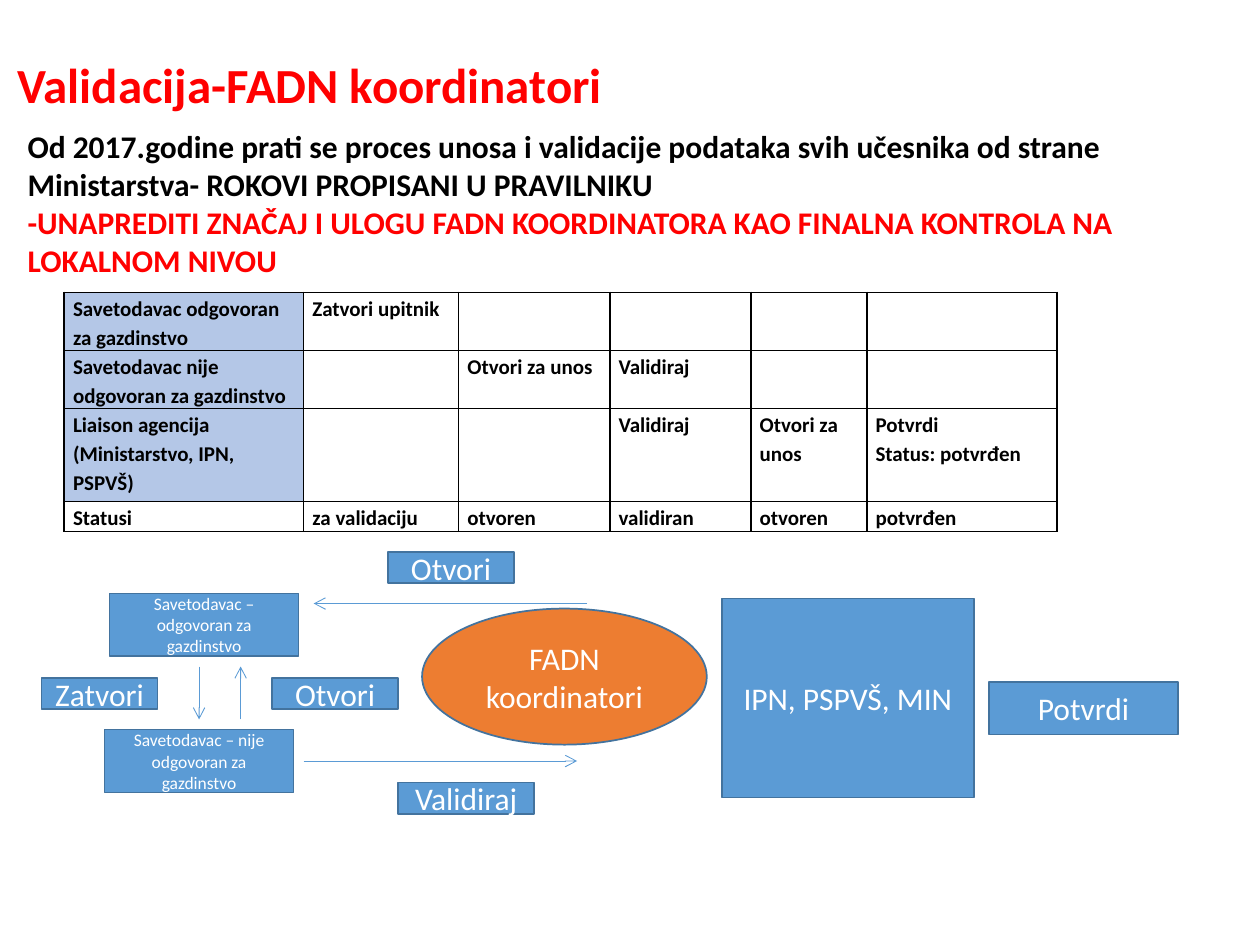
from lxml.etree import SubElement
from pptx import Presentation
from pptx.dml.color import RGBColor
from pptx.enum.shapes import MSO_CONNECTOR, MSO_SHAPE
from pptx.enum.text import MSO_ANCHOR, PP_ALIGN
from pptx.oxml.ns import qn
from pptx.util import Inches, Pt

FONT = "Calibri"
RED, BLACK, WHITE = "FF0000", "000000", "FFFFFF"
BLUE, DARK_BLUE, PALE_BLUE, ORANGE = "5B9BD5", "43739E", "B4C7E7", "ED7D31"

# Content: text boxes as (left, top, width, height), size, wrap, [(text, colour)]
TEXT_BOXES = [
    ((0.04, 0.38, 4.87, 0.57), 28, False, [("Validacija-FADN koordinatori", RED)]),
    ((0.12, 0.96, 9.15, 1.31), 18, True, [
        ("Od 2017.godine prati se proces unosa i validacije podataka svih učesnika "
         "od strane Ministarstva- ROKOVI PROPISANI U PRAVILNIKU", BLACK),
        ("-UNAPREDITI ZNAČAJ I ULOGU FADN KOORDINATORA KAO FINALNA KONTROLA "
         "NA LOKALNOM NIVOU", RED),
    ]),
]

TABLE_LEFT, TABLE_TOP = 0.51, 2.32
COLUMN_WIDTHS = [1.9, 1.23, 1.2, 1.12, 0.92, 1.51]
ROW_HEIGHTS = [0.46, 0.46, 0.74, 0.24]
TABLE_ROWS = [
    ["Savetodavac odgovoran za gazdinstvo", "Zatvori upitnik", "", "", "", ""],
    ["Savetodavac nije odgovoran za gazdinstvo", "", "Otvori za unos", "Validiraj", "", ""],
    ["Liaison agencija (Ministarstvo, IPN, PSPVŠ)", "", "", "Validiraj",
     "Otvori za unos", "Potvrdi\nStatus: potvrđen"],
    ["Statusi", "za validaciju", "otvoren", "validiran", "otvoren", "potvrđen"],
]

# Diagram boxes: text, (left, top, width, height), text size
BOXES = [
    ("Savetodavac – odgovoran za gazdinstvo", (0.87, 4.71, 1.5, 0.5), 10),
    ("Savetodavac – nije odgovoran za gazdinstvo", (0.83, 5.79, 1.5, 0.5), 10),
    ("Zatvori", (0.33, 5.38, 0.92, 0.25), 18),
    ("Otvori", (2.16, 5.38, 1, 0.25), 18),
    ("Otvori", (3.08, 4.38, 1, 0.25), 18),
    ("Validiraj", (3.16, 6.21, 1.08, 0.25), 18),
    ("IPN, PSPVŠ, MIN", (5.73, 4.75, 2, 1.58), 18),
    ("Potvrdi", (7.85, 5.41, 1.5, 0.42), 18),
]
COORDINATORS = ("FADN koordinatori", (3.35, 4.83, 2.26, 1.08), 18)

# Arrows: start x, start y, end x, end y
ARROWS = [
    (1.58, 5.29, 1.58, 5.71),
    (1.91, 5.71, 1.91, 5.29),
    (2.41, 6.04, 4.58, 6.04),
    (4.66, 4.79, 2.49, 4.79),
]


def color(value):
    return RGBColor.from_string(value)


def inches(values):
    return [Inches(value) for value in values]


def style_font(paragraph, size, font_color, bold=False):
    for run in paragraph.runs:
        run.font.name = FONT
        run.font.size = Pt(size)
        run.font.bold = bold
        run.font.color.rgb = color(font_color)


def add_text_box(slide, position, size, wrap, lines):
    text_frame = slide.shapes.add_textbox(*inches(position)).text_frame
    text_frame.word_wrap = wrap
    text_frame.text = "\n".join(text for text, _ in lines)
    for paragraph, (_, font_color) in zip(text_frame.paragraphs, lines):
        style_font(paragraph, size, font_color, bold=True)


def add_borders(cell):
    properties = cell._tc.get_or_add_tcPr()
    for index, side in enumerate(("a:lnL", "a:lnR", "a:lnT", "a:lnB")):
        border = properties.makeelement(qn(side), {"w": str(Pt(1))})
        fill = SubElement(border, qn("a:solidFill"))
        SubElement(fill, qn("a:srgbClr"), val=BLACK)
        properties.insert(index, border)


def add_status_table(slide):
    frame = slide.shapes.add_table(
        len(TABLE_ROWS), len(COLUMN_WIDTHS),
        *inches((TABLE_LEFT, TABLE_TOP, sum(COLUMN_WIDTHS), sum(ROW_HEIGHTS))))
    table = frame.table
    table.first_row = table.horz_banding = False
    for column, width in zip(table.columns, COLUMN_WIDTHS):
        column.width = Inches(width)
    for row, height in zip(table.rows, ROW_HEIGHTS):
        row.height = Inches(height)
    for row_index, texts in enumerate(TABLE_ROWS):
        for column_index, text in enumerate(texts):
            cell = table.cell(row_index, column_index)
            cell.margin_left = cell.margin_right = Inches(0.07)
            cell.margin_top = cell.margin_bottom = 0
            is_role = column_index == 0 and row_index < len(TABLE_ROWS) - 1
            cell.fill.solid()
            cell.fill.fore_color.rgb = color(PALE_BLUE if is_role else WHITE)
            add_borders(cell)
            cell.text_frame.text = text
            for paragraph in cell.text_frame.paragraphs:
                paragraph.line_spacing = 1.15
                style_font(paragraph, 12, BLACK, bold=True)


def add_node(slide, text, position, size, kind=MSO_SHAPE.RECTANGLE, fill=BLUE):
    shape = slide.shapes.add_shape(kind, *inches(position))
    shape.shadow.inherit = False
    shape.fill.solid()
    shape.fill.fore_color.rgb = color(fill)
    shape.line.color.rgb = color(DARK_BLUE)
    shape.line.width = Pt(1)
    text_frame = shape.text_frame
    text_frame.word_wrap = True
    text_frame.vertical_anchor = MSO_ANCHOR.MIDDLE
    text_frame.text = text
    paragraph = text_frame.paragraphs[0]
    paragraph.alignment = PP_ALIGN.CENTER
    style_font(paragraph, size, WHITE)


def add_arrow(slide, points):
    connector = slide.shapes.add_connector(MSO_CONNECTOR.STRAIGHT, *inches(points))
    connector.line.color.rgb = color(BLUE)
    connector.line.width = Pt(0.5)
    SubElement(connector.line._get_or_add_ln(), qn("a:tailEnd"), type="arrow")
    SubElement(connector._element.spPr, qn("a:effectLst"))


def main():
    presentation = Presentation()
    presentation.slide_width, presentation.slide_height = inches((10, 7.5))
    slide = presentation.slides.add_slide(presentation.slide_layouts[6])

    # Heading, introduction and table
    for text_box in TEXT_BOXES:
        add_text_box(slide, *text_box)
    add_status_table(slide)

    # Validation flow
    for box in BOXES:
        add_node(slide, *box)
    for points in ARROWS:
        add_arrow(slide, points)
    add_node(slide, *COORDINATORS, kind=MSO_SHAPE.OVAL, fill=ORANGE)

    presentation.save("out.pptx")


if __name__ == "__main__":
    main()
